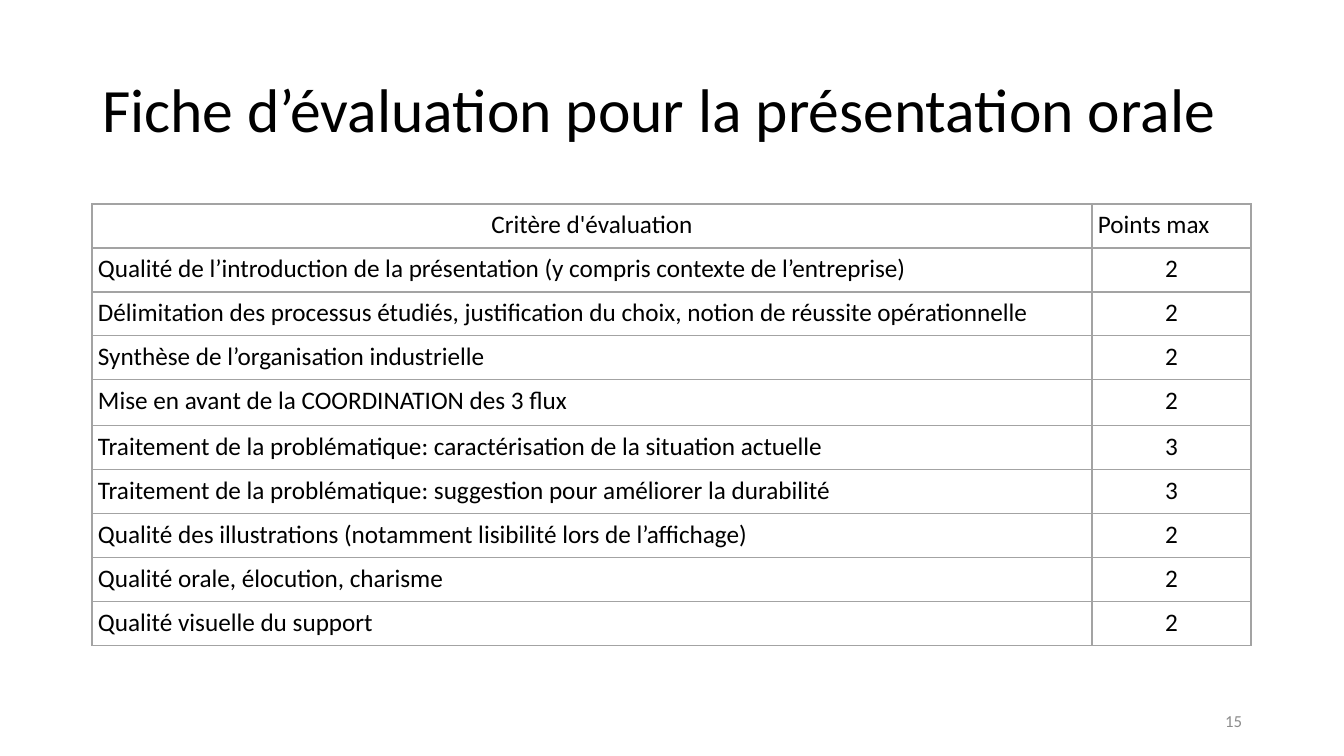
from dataclasses import dataclass

from lxml import etree
from pptx import Presentation
from pptx.dml.color import RGBColor
from pptx.enum.text import MSO_ANCHOR, MSO_AUTO_SIZE, PP_ALIGN
from pptx.oxml.ns import qn
from pptx.util import Pt

LEFT, CENTER, RIGHT = PP_ALIGN.LEFT, PP_ALIGN.CENTER, PP_ALIGN.RIGHT
MIDDLE = MSO_ANCHOR.MIDDLE
NO_AUTOFIT = MSO_AUTO_SIZE.NONE

TITLE = "Fiche d’évaluation pour la présentation orale"
HEADER = ("Critère d'évaluation", "Points max")
CRITERIA = [
    ("Qualité de l’introduction de la présentation (y compris contexte de l’entreprise)", 2),
    ("Délimitation des processus étudiés, justification du choix, notion de réussite opérationnelle", 2),
    ("Synthèse de l’organisation industrielle", 2),
    ("Mise en avant de la COORDINATION des 3 flux", 2),
    ("Traitement de la problématique: caractérisation de la situation actuelle", 3),
    ("Traitement de la problématique: suggestion pour améliorer la durabilité", 3),
    ("Qualité des illustrations (notamment lisibilité lors de l’affichage)", 2),
    ("Qualité orale, élocution, charisme", 2),
    ("Qualité visuelle du support", 2),
]
PAGE_NUMBER = "15"

# Lengths in px
PAGE_SIZE = (1344, 756)
TITLE_BOX = (92, 40, 1159, 146)
TABLE_LEFT, TABLE_TOP = 92, 204
COLUMN_WIDTHS = (1000, 159)
ROW_HEIGHT = 44
TALL_ROW, TALL_HEIGHT = 4, 46
CELL_MARGIN = 6
NUMBER_BOX = (950, 701, 302, 40)


@dataclass(frozen=True)
class Theme:
    font: str = "Calibri"
    ink: str = "000000"
    muted: str = "8C8C8C"
    paper: str = "FFFFFF"
    border: str = "A3A3A3"
    title_size: int = 44
    table_size: int = 18
    number_size: int = 12
    border_width: int = 1


THEME = Theme()


def px(length):
    return round(length * 914400 / 100.8)


def write(frame, text, size, color, align):
    frame.text = text
    para = frame.paragraphs[0]
    para.alignment = align
    font = para.runs[0].font
    font.name, font.size, font.bold = THEME.font, Pt(size), False
    font.color.rgb = RGBColor.from_string(color)
    return para


def add_borders(cell):
    properties = cell._tc.get_or_add_tcPr()
    for side in ("a:lnL", "a:lnR", "a:lnT", "a:lnB"):
        line = etree.SubElement(properties, qn(side), w=str(Pt(THEME.border_width)))
        fill = etree.SubElement(line, qn("a:solidFill"))
        etree.SubElement(fill, qn("a:srgbClr"), val=THEME.border)


def add_title(page):
    title = page.shapes.title
    title.left, title.top, title.width, title.height = map(px, TITLE_BOX)
    frame = title.text_frame
    para = write(frame, TITLE, THEME.title_size, THEME.ink, LEFT)
    para.line_spacing = 0.9
    frame.vertical_anchor = MIDDLE
    frame.auto_size = NO_AUTOFIT


def add_criteria_table(page):
    rows = [HEADER, *CRITERIA]
    heights = [TALL_HEIGHT if i == TALL_ROW else ROW_HEIGHT for i in range(len(rows))]
    box = (TABLE_LEFT, TABLE_TOP, sum(COLUMN_WIDTHS), sum(heights))
    table = page.shapes.add_table(len(rows), len(HEADER), *map(px, box)).table
    table.first_row = table.horz_banding = False
    for column, width in zip(table.columns, COLUMN_WIDTHS):
        column.width = px(width)
    for i, (values, height) in enumerate(zip(rows, heights)):
        table.rows[i].height = px(height)
        alignments = (CENTER, LEFT) if i == 0 else (LEFT, CENTER)
        for j, (value, align) in enumerate(zip(values, alignments)):
            cell = table.cell(i, j)
            cell.margin_left = cell.margin_right = px(CELL_MARGIN)
            cell.margin_top = cell.margin_bottom = px(CELL_MARGIN)
            write(cell.text_frame, str(value), THEME.table_size, THEME.ink, align)
            add_borders(cell)
            cell.fill.solid()
            cell.fill.fore_color.rgb = RGBColor.from_string(THEME.paper)


def add_page_number(page):
    frame = page.shapes.add_textbox(*map(px, NUMBER_BOX)).text_frame
    frame.word_wrap = True
    frame.vertical_anchor = MIDDLE
    write(frame, PAGE_NUMBER, THEME.number_size, THEME.muted, RIGHT)


def main():
    deck = Presentation()
    deck.slide_width, deck.slide_height = map(px, PAGE_SIZE)
    title_only = deck.slide_layouts[5]
    page = deck.slides.add_slide(title_only)
    add_title(page)
    add_criteria_table(page)
    add_page_number(page)
    deck.save("out.pptx")


if __name__ == "__main__":
    main()
